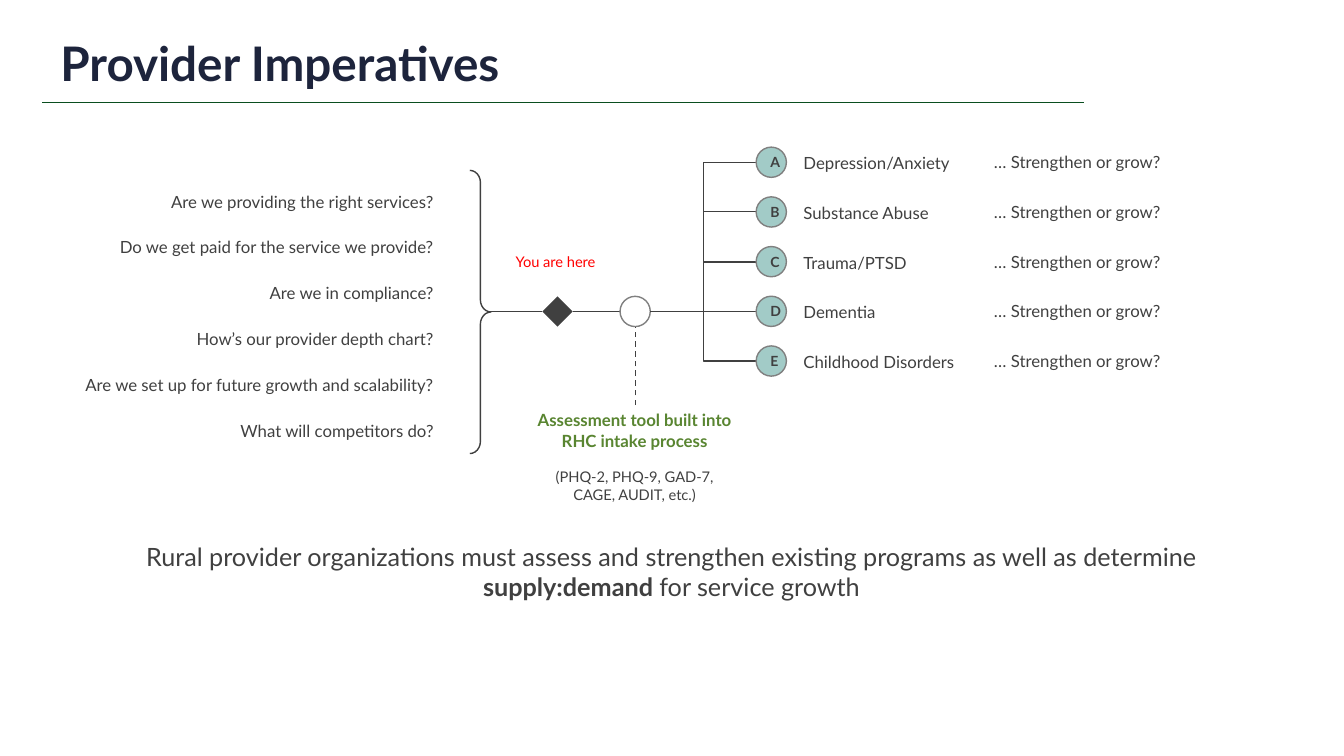
from lxml import etree
from pptx import Presentation
from pptx.dml.color import RGBColor
from pptx.enum.dml import MSO_LINE
from pptx.enum.shapes import MSO_CONNECTOR, MSO_SHAPE
from pptx.enum.text import MSO_ANCHOR, MSO_AUTO_SIZE, PP_ALIGN
from pptx.oxml.ns import qn
from pptx.util import Inches, Pt

STRAIGHT, ELBOW = MSO_CONNECTOR.STRAIGHT, MSO_CONNECTOR.ELBOW
OVAL, DIAMOND, BRACE = MSO_SHAPE.OVAL, MSO_SHAPE.DIAMOND, MSO_SHAPE.RIGHT_BRACE
LEFT, CENTER, RIGHT = PP_ALIGN.LEFT, PP_ALIGN.CENTER, PP_ALIGN.RIGHT
MIDDLE, BOTTOM = MSO_ANCHOR.MIDDLE, MSO_ANCHOR.BOTTOM
GROW, FIXED = MSO_AUTO_SIZE.SHAPE_TO_FIT_TEXT, MSO_AUTO_SIZE.NONE
DASH = MSO_LINE.DASH

FONT = "Lato"
COLORS = {
    "title": "1D243C", "rule": "0A4E1F", "text": "404040", "edge": "808080",
    "teal": "A2CBC7", "green": "598531", "red": "FF0000",
}
TITLE = "Provider Imperatives"
QUESTIONS = [
    "Are we providing the right services?",
    "Do we get paid for the service we provide?",
    "Are we in compliance?",
    "How’s our provider depth chart?",
    "Are we set up for future growth and scalability?",
    "What will competitors do?",
]
NEEDS = [
    ("A", "Depression/Anxiety"),
    ("B", "Substance Abuse"),
    ("C", "Trauma/PTSD"),
    ("D", "Dementia"),
    ("E", "Childhood Disorders"),
]
CHOICE = "… Strengthen or grow?"
HERE = "You are here"
TOOL = "Assessment tool built into RHC intake process"
TESTS = "(PHQ-2, PHQ-9, GAD-7, CAGE, AUDIT, etc.)"
CLOSING = [
    ("Rural provider organizations must assess and strengthen existing programs as well as determine ", False),
    ("supply:demand ", True),
    ("for service growth", False),
]

DOT = 0.3
AXIS = 3.09
NODE_X, FORK_X, MARK_X = 6.15, 7.5, 5.38
NEED_TOP, NEED_STEP = 1.46, 0.493
ASK_TOP, ASK_STEP, ASK_RIGHT, ASK_WIDTH = 1.85, 0.454, 4.4, 3.82

prs = Presentation()
prs.slide_width, prs.slide_height = Inches(13.33), Inches(7.5)
slide = prs.slides.add_slide(prs.slide_layouts[5])
shapes = slide.shapes


def rgb(name):
    return RGBColor.from_string(COLORS[name])


def write(para, text, size, color="text", bold=False):
    run = para.add_run()
    run.text = text
    font = run.font
    font.name, font.size, font.bold = FONT, Pt(size), bold
    font.color.rgb = rgb(color)


def add_box(x, y, w, h, align=LEFT):
    frame = shapes.add_textbox(*map(Inches, (x, y, w, h))).text_frame
    frame.word_wrap = True
    frame.auto_size = GROW
    para = frame.paragraphs[0]
    para.alignment = align
    return frame, para


def add_label(x, y, w, h, text, size=12, color="text", align=LEFT):
    frame, para = add_box(x, y, w, h, align)
    write(para, text, size, color)


def add_form(kind, x, y, w, h, fill=None, line=None):
    form = shapes.add_shape(kind, *map(Inches, (x, y, w, h)))
    form.shadow.inherit = False
    if fill:
        form.fill.solid()
        form.fill.fore_color.rgb = rgb(fill)
    else:
        form.fill.background()
    if line:
        form.line.color.rgb = rgb(line)
        form.line.width = Pt(1)
    else:
        form.line.fill.background()
    return form


def add_link(x1, y1, x2, y2, kind=STRAIGHT, color="text", dash=None):
    link = shapes.add_connector(kind, *map(Inches, (x1, y1, x2, y2)))
    link.line.color.rgb = rgb(color)
    link.line.width = Pt(1)
    if dash:
        link.line.dash_style = dash
    etree.SubElement(link._element.spPr, qn("a:effectLst"))


title = shapes.title
title.left, title.top, title.width, title.height = map(Inches, (0.5, 0.3, 10.4, 0.66))
frame = title.text_frame
frame.word_wrap = True
frame.auto_size = FIXED
frame.vertical_anchor = BOTTOM
para = frame.paragraphs[0]
para.alignment = LEFT
para.line_spacing = 0.9
write(para, TITLE, 34, "title", True)
add_link(0.42, 1.02, 10.75, 1.02, color="rule")

for i, text in enumerate(QUESTIONS):
    add_label(ASK_RIGHT - ASK_WIDTH, ASK_TOP + i * ASK_STEP, ASK_WIDTH, 0.3, text, align=RIGHT)

brace = add_form(BRACE, 4.66, 1.69, 0.21, 2.81, line="text")
brace.adjustments[0] = 0.573
brace.adjustments[1] = 0.5
add_link(4.87, AXIS, MARK_X, AXIS)
add_form(DIAMOND, MARK_X, AXIS - DOT / 2, DOT, DOT, fill="text")
add_label(4.99, 2.46, 1.04, 0.47, HERE, 10.5, "red", CENTER)
add_link(MARK_X + DOT, AXIS, NODE_X, AXIS)
add_form(OVAL, NODE_X, AXIS - DOT / 2, DOT, DOT, line="edge")
add_link(NODE_X + DOT / 2, 4.02, NODE_X + DOT / 2, AXIS + DOT / 2, dash=DASH)

for i, (letter, need) in enumerate(NEEDS):
    top = NEED_TOP + i * NEED_STEP
    mid = round(top + DOT / 2, 2)
    add_link(NODE_X + DOT, AXIS, FORK_X, mid, ELBOW)
    badge = add_form(OVAL, FORK_X, top, DOT, DOT, "teal", "edge")
    badge.text_frame.vertical_anchor = MIDDLE
    para = badge.text_frame.paragraphs[0]
    para.alignment = CENTER
    write(para, letter, 10, bold=True)
    add_label(7.87, top + 0.01, 2.7, 0.3, need)
    add_label(9.76, top, 2.07, 0.3, CHOICE)

frame, para = add_box(5.23, 4.02, 2.13, 1.04, CENTER)
write(para, TOOL, 12, "green", True)
para = frame.add_paragraph()
para.alignment = CENTER
para.space_before = Pt(12.6)
write(para, TESTS, 10.5)

frame, para = add_box(1.23, 5.32, 10.86, 0.71, CENTER)
for text, bold in CLOSING:
    write(para, text, 18, bold=bold)

prs.save("out.pptx")
